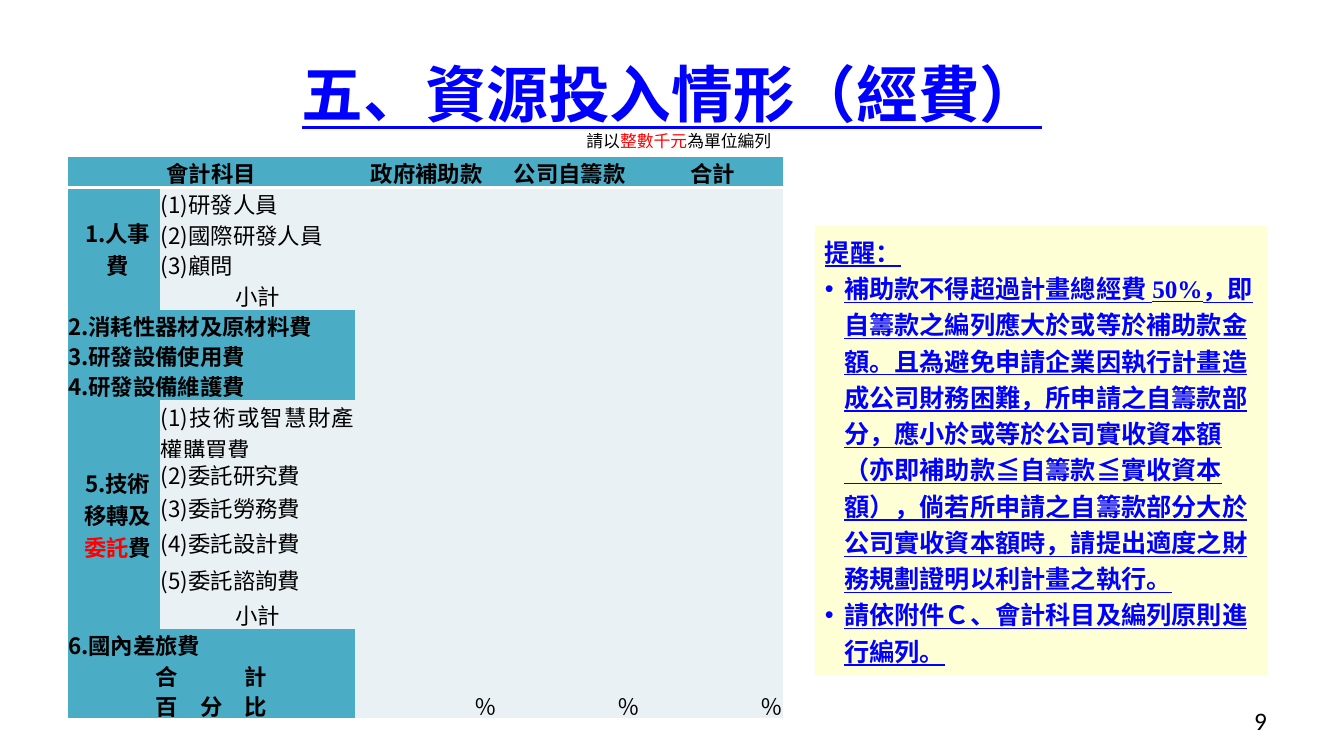
"""Build the budget slide: an expense table beside a reminder panel."""
from dataclasses import dataclass

from lxml.etree import SubElement
from pptx import Presentation
from pptx.dml.color import RGBColor
from pptx.enum.text import MSO_ANCHOR as Anchor, MSO_AUTO_SIZE as AutoSize, PP_ALIGN as Align
from pptx.oxml.ns import qn
from pptx.util import Inches, Pt


@dataclass(frozen=True)
class Theme:
    sans: str = "Noto Sans CJK SC"
    serif: str = "Times New Roman"
    number_font: str = "Calibri"
    black: str = "000000"
    blue: str = "0000FF"
    red: str = "FF0000"
    white: str = "FFFFFF"
    heading_fill: str = "4BACC6"
    entry_fill: str = "E9F1F5"
    panel_fill: str = "FFFFCC"
    title_size: int = 44
    body_size: int = 18
    table_size: int = 16
    note_size: int = 12
    plain_table: str = "{2D5ABB26-0587-4C30-8999-92F81FD0307C}"


def write(paragraph, text, *, size, font, color, bold=False, underline=False,
          align=None, tracking=0):
    run = paragraph.add_run()
    run.text = text
    run.font.size = Pt(size)
    run.font.name = font
    run.font.bold = bold
    run.font.underline = underline
    run.font.color.rgb = RGBColor.from_string(color)
    properties = run.font._element
    SubElement(properties, qn("a:ea")).set("typeface", Theme.sans)
    if tracking:
        properties.set("spc", str(tracking * 100))
    if align is not None:
        paragraph.alignment = align


class BudgetSlide:
    COLUMNS, ROWS = 160, 90

    def __init__(self, presentation, theme):
        self.theme = theme
        self.column = presentation.slide_width / self.COLUMNS
        self.row = presentation.slide_height / self.ROWS
        self.slide = presentation.slides.add_slide(presentation.slide_layouts[1])
        self.shapes = self.slide.shapes

    def area(self, left, top, width, height):
        return (round(left * self.column), round(top * self.row),
                round(width * self.column), round(height * self.row))

    def place(self, shape, *area):
        shape.left, shape.top, shape.width, shape.height = self.area(*area)

    def title(self, text, *area):
        theme, shape = self.theme, self.shapes.title
        self.place(shape, *area)
        shape.text_frame.vertical_anchor = Anchor.MIDDLE
        write(shape.text_frame.paragraphs[0], text, size=theme.title_size, font=theme.serif,
              color=theme.blue, bold=True, underline=True, align=Align.CENTER)

    def label(self, pieces, *area, size, font, align=Align.LEFT, wrap=True, anchor=Anchor.TOP):
        frame = self.shapes.add_textbox(*self.area(*area)).text_frame
        frame.word_wrap = wrap
        frame.vertical_anchor = anchor
        for text, color in pieces:
            write(frame.paragraphs[0], text, size=size, font=font, color=color, align=align)

    def reminder(self, heading, items, *area):
        theme, shape = self.theme, self.slide.placeholders[1]
        self.place(shape, *area)
        shape.fill.solid()
        shape.fill.fore_color.rgb = RGBColor.from_string(theme.panel_fill)
        color = shape._element.spPr.find(".//" + qn("a:srgbClr"))
        SubElement(color, qn("a:alpha")).set("val", "80000")
        frame = shape.text_frame
        frame.auto_size = AutoSize.NONE
        frame.vertical_anchor = Anchor.TOP
        for index, text in enumerate([heading, *items]):
            paragraph = frame.add_paragraph() if index else frame.paragraphs[0]
            paragraph.line_spacing = 1.2
            paragraph.space_before = Pt(0)
            write(paragraph, text, size=theme.body_size, font=theme.serif,
                  color=theme.blue, bold=True, underline=True, align=Align.LEFT)
            properties = paragraph._p.get_or_add_pPr()
            hanging = Inches(0.19) if index else 0
            properties.set("marL", str(hanging))
            properties.set("indent", str(-hanging))
            if not index:
                SubElement(properties, qn("a:buNone"))

    def borders(self, cell, **widths):
        properties = cell._tc.get_or_add_tcPr()
        for side in "LRTB":
            if side in widths:
                line = SubElement(properties, qn(f"a:ln{side}"), w=str(Pt(widths[side])))
                fill = SubElement(line, qn("a:solidFill"))
                SubElement(fill, qn("a:srgbClr"), val=self.theme.white)

    def table(self, left, top, widths, heights):
        area = self.area(left, top, sum(widths), sum(heights))
        table = self.shapes.add_table(len(heights), len(widths), *area).table
        table.first_row = table.horz_banding = False
        table._tbl.tblPr.find(qn("a:tableStyleId")).text = self.theme.plain_table
        for column, width in zip(table.columns, widths):
            column.width = round(width * self.column)
        for row, height in zip(table.rows, heights):
            row.height = round(height * self.row)
        last_row, last_column = len(heights) - 1, len(widths) - 1
        for r in range(len(heights)):
            for c in range(len(widths)):
                cell = table.cell(r, c)
                cell.margin_left = cell.margin_right = Inches(0.01)
                cell.margin_top = cell.margin_bottom = 0
                cell.vertical_anchor = Anchor.MIDDLE
                sides = {"L": 1} if c == 0 else {"R": 1} if c == last_column else {}
                if r == 0:
                    sides.update(T=1, B=3)
                elif r == last_row:
                    sides.update(B=1)
                self.borders(cell, **sides)
                self.paint(cell, self.theme.entry_fill)
        return table

    def paint(self, cell, color):
        cell.fill.solid()
        cell.fill.fore_color.rgb = RGBColor.from_string(color)

    def entry(self, cell, text, align, heading=False, color=None, tracking=0):
        theme = self.theme
        if heading:
            self.paint(cell, theme.heading_fill)
        write(cell.text_frame.paragraphs[0], text, size=theme.table_size, font=theme.sans,
              color=color or theme.black, bold=heading, align=align, tracking=tracking)


def fill_budget(page, table):
    for column, text in {0: "會計科目", 2: "政府補助款", 3: "公司自籌款", 4: "合計"}.items():
        page.entry(table.cell(0, column), text, Align.CENTER, heading=True)

    groups = {
        1: ([("1.人事", None), ("費", None)],
            ["(1)研發人員", "(2)國際研發人員", "(3)顧問", "小計"]),
        8: ([("5.技術移轉及", None), ("委託", page.theme.red), ("費", None)],
            ["(1)技術或智慧財產權購買費", "(2)委託研究費", "(3)委託勞務費",
             "(4)委託設計費", "(5)委託諮詢費", "小計"]),
    }
    for start, (pieces, items) in groups.items():
        category = table.cell(start, 0)
        category.merge(table.cell(start + len(items) - 1, 0))
        for text, color in pieces:
            page.entry(category, text, Align.CENTER, heading=True, color=color)
        category.text_frame.paragraphs[0]._p.get_or_add_pPr().set("marL", str(Inches(0.08)))
        for row, text in enumerate(items, start):
            align = Align.CENTER if text == "小計" else Align.JUSTIFY
            page.entry(table.cell(row, 1), text, align)

    singles = {5: "2.消耗性器材及原材料費", 6: "3.研發設備使用費",
               7: "4.研發設備維護費", 14: "6.國內差旅費"}
    for row, text in singles.items():
        page.entry(table.cell(row, 0), text, Align.JUSTIFY, heading=True)
    page.entry(table.cell(15, 0), "合　", Align.CENTER, heading=True, tracking=16)
    page.entry(table.cell(15, 0), "計", Align.CENTER, heading=True)
    page.entry(table.cell(16, 0), "百　分　比", Align.CENTER, heading=True)
    for row in (0, *singles, 15, 16):
        table.cell(row, 0).merge(table.cell(row, 1))
    for column in (2, 3, 4):
        page.entry(table.cell(16, column), "％", Align.RIGHT)


def main():
    presentation = Presentation()
    presentation.slide_width, presentation.slide_height = Inches(13.33), Inches(7.5)
    theme = Theme()
    page = BudgetSlide(presentation, theme)
    page.title("五、資源投入情形（經費）", 8, 3.6, 144, 15)
    page.label([("9", theme.black)], 114.7, 83.4, 37.3, 4.8, size=theme.body_size,
               font=theme.number_font, align=Align.RIGHT, anchor=Anchor.MIDDLE)
    heights = [3.72] * 2 + [3.5] * 6 + [6.84, 4.08, 3.84, 4.44, 4.44] + [3.5] * 4
    fill_budget(page, page.table(8, 18.6, [11.04, 23.28, 17, 17, 17], heights))
    page.label([("請以", theme.black), ("整數千元", theme.red), ("為單位編列", theme.black)],
               68.64, 15, 24.6, 3.6, size=theme.note_size, font=theme.sans, wrap=False)
    page.reminder("提醒：", [
        "補助款不得超過計畫總經費 50%，即自籌款之編列應大於或等於補助款金額。"
        "且為避免申請企業因執行計畫造成公司財務困難，所申請之自籌款部分，"
        "應小於或等於公司實收資本額（亦即補助款≦自籌款≦實收資本額），"
        "倘若所申請之自籌款部分大於公司實收資本額時，請提出適度之財務規劃證明以利計畫之執行。",
        "請依附件Ｃ、會計科目及編列原則進行編列。",
    ], 97, 26.9, 53.9, 53.5)
    presentation.save("out.pptx")


if __name__ == "__main__":
    main()
